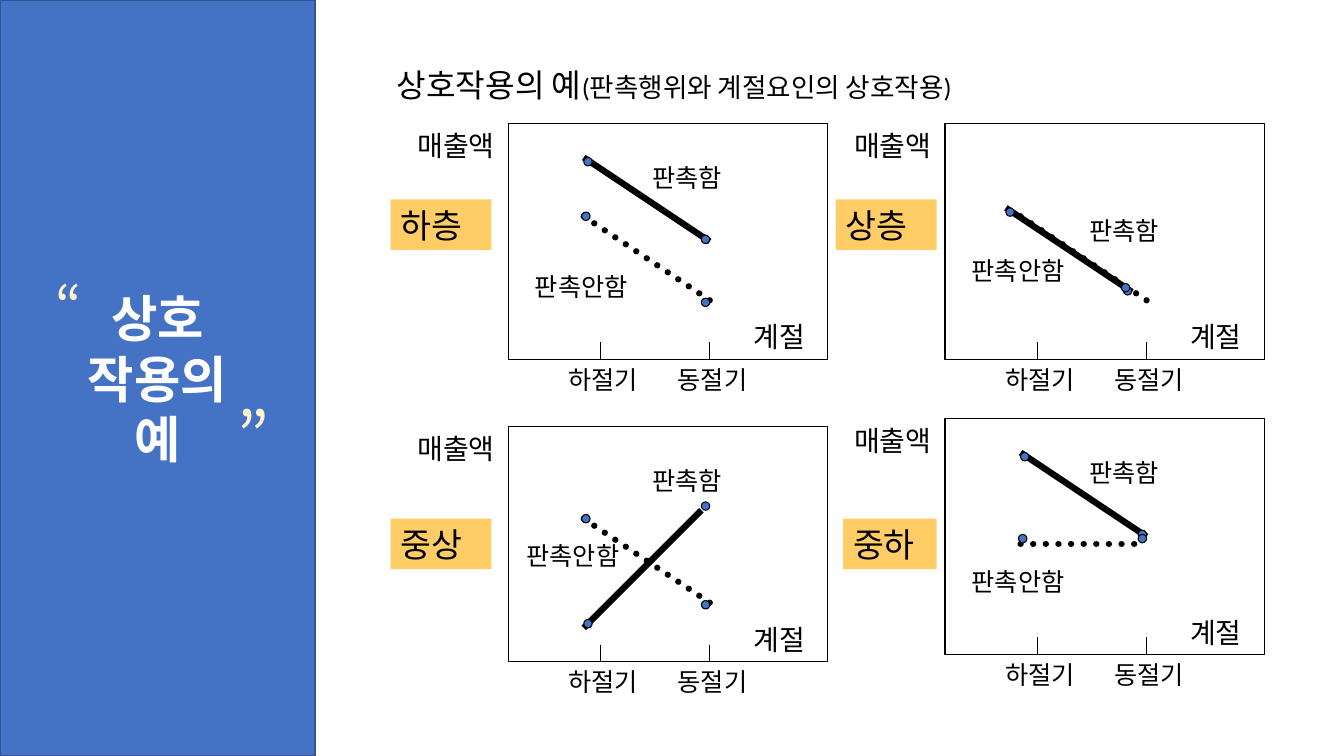
"""Build the slide on interaction of sales promotion and season."""
from typing import NamedTuple

from lxml.etree import SubElement
from pptx import Presentation
from pptx.dml.color import RGBColor
from pptx.enum.dml import MSO_LINE as Dash
from pptx.enum.shapes import MSO_CONNECTOR as Conn, MSO_SHAPE as Kind
from pptx.enum.text import MSO_ANCHOR as Anchor, MSO_AUTO_SIZE as Fit, PP_ALIGN as Align
from pptx.oxml.ns import qn
from pptx.util import Emu, Pt

PX = 9525
BLACK, WHITE, BLUE = "000000", "FFFFFF", "4472C4"
NAVY, AMBER, CREAM = "325491", "FFCC66", "FFF2CC"
SERIF, SANS, CJK = "Times New Roman", "Calibri", "Noto Sans CJK KR"


class Point(NamedTuple):
    x: int
    y: int


class Box(NamedTuple):
    x: int
    y: int
    w: int
    h: int


class Panel(NamedTuple):
    """A plot at a place, with parts measured from its corner."""
    at: Point
    solid: tuple[Point, Point]
    dotted: tuple[Point, Point]
    marks: list[Point]
    yes: Point
    no: Point


class Tag(NamedTuple):
    text: str
    box: Box


class Quote(NamedTuple):
    text: str
    box: Box
    size: int


FALL = (Point(72, 32), Point(192, 112))
DOWN = (Point(72, 88), Point(192, 168))
PANELS = [
    Panel(Point(484, 118), FALL, DOWN,
          [Point(72, 32), Point(184, 106), Point(70, 84), Point(184, 166)],
          Point(128, 32), Point(16, 136)),
    Panel(Point(900, 118), (Point(58, 80), Point(178, 160)), DOWN,
          [Point(58, 80), Point(170, 155), Point(168, 152)],
          Point(128, 82), Point(16, 120)),
    Panel(Point(484, 406), (Point(72, 192), Point(184, 80)), DOWN,
          [Point(72, 184), Point(184, 72), Point(70, 84), Point(184, 166)],
          Point(128, 32), Point(8, 104)),
    Panel(Point(900, 399), FALL, (Point(72, 119), Point(192, 119)),
          [Point(72, 32), Point(184, 106), Point(70, 110), Point(184, 110)],
          Point(128, 32), Point(16, 136)),
]
TAGS = [
    Tag("하층", Box(372, 190, 96, 48)),
    Tag("중하", Box(803, 494, 89, 48)),
    Tag("상층", Box(796, 190, 96, 48)),
    Tag("중상", Box(372, 494, 96, 48)),
]
QUOTES = [
    Quote("“", Box(43, 254, 47, 74), 40),
    Quote("”", Box(217, 371, 53, 87), 48),
]


def tint(code: str) -> RGBColor:
    """Turn a hex string into a colour."""
    return RGBColor.from_string(code)


def scale(box: Box) -> list[Emu]:
    """Turn px into EMU."""
    return [Emu(n * PX) for n in box]


def write(shape, *lines, size=18, font=SERIF, color=BLACK, bold=False,
          align=Align.LEFT, anchor=Anchor.TOP, wrap=True, space=None) -> None:
    """Fill a shape with paragraphs; a line is a string or (text, size) runs."""
    frame = shape.text_frame
    frame.word_wrap = wrap
    frame.auto_size = Fit.NONE
    frame.vertical_anchor = anchor
    for i, line in enumerate(lines):
        para = frame.add_paragraph() if i else frame.paragraphs[0]
        para.alignment = align
        if space:
            para.line_spacing = space
        for text, points in [(line, size)] if isinstance(line, str) else line:
            run = para.add_run()
            run.text = text
            run.font.size = Pt(points)
            run.font.name = font
            run.font.bold = bold
            run.font.color.rgb = tint(color)


def label(slide, text: str, box: Box, **form) -> None:
    """Add a text box."""
    write(slide.shapes.add_textbox(*scale(box)), text, **form)


def block(slide, kind: Kind, box: Box, fill: str = "", line: str = "", width: float = 0.75):
    """Add a preset shape with optional fill and line."""
    shape = slide.shapes.add_shape(kind, *scale(box))
    shape.shadow.inherit = False
    if fill:
        shape.fill.solid()
        shape.fill.fore_color.rgb = tint(fill)
    else:
        shape.fill.background()
    if line:
        shape.line.color.rgb = tint(line)
        shape.line.width = Pt(width)
    else:
        shape.line.fill.background()
    return shape


def rule(slide, at: Point, ends: tuple[Point, Point], width: float, dots: bool = False) -> None:
    """Add a straight line between two points of a plot."""
    spots = [Emu((n + off) * PX) for end in ends for n, off in zip(end, at)]
    link = slide.shapes.add_connector(Conn.STRAIGHT, *spots)
    link.line.color.rgb = tint(BLACK)
    link.line.width = Pt(width)
    if dots:
        link.line.dash_style = Dash.ROUND_DOT
        link.line._get_or_add_ln().set("cap", "rnd")
    SubElement(link._element.spPr, qn("a:effectLst"))


def plot(slide, panel: Panel) -> None:
    """Draw one plot with its axis words, lines and marks."""
    at = panel.at

    def word(text: str, x: int, y: int, w: int, size: int = 18) -> None:
        """Place a word from the corner of the plot."""
        label(slide, text, Box(at.x + x, at.y + y, w, 2 * size + 2), size=size)

    block(slide, Kind.RECTANGLE, Box(*at, 304, 224), line=BLACK)
    for x, season in ((88, "하절기"), (192, "동절기")):
        rule(slide, at, (Point(x, 208), Point(x, 224)), 0.75)
        word(season, x - 40, 224, 96)
    word("계절", 224, 182, 88, 20)
    word("매출액", -96, 0, 128, 20)
    rule(slide, at, panel.solid, 4.5)
    rule(slide, at, panel.dotted, 4.5, dots=True)
    for mark in panel.marks:
        block(slide, Kind.OVAL, Box(at.x + mark.x, at.y + mark.y, 8, 8), BLUE, BLACK)
    word("판촉함", *panel.yes, 128)
    word("판촉안함", *panel.no, 144)


def main() -> None:
    """Build and save the slide."""
    deck = Presentation()
    deck.slide_width, deck.slide_height = Emu(1280 * PX), Emu(720 * PX)
    slide = deck.slides.add_slide(deck.slide_layouts[5])
    title = slide.shapes.title
    title.left, title.top, title.width, title.height = scale(Box(368, 36, 907, 94))
    write(title, [("상호작용의 예", 23), ("(판촉행위와 계절요인의 상호작용)", 19)],
          font=SANS, anchor=Anchor.MIDDLE, space=0.9)
    for panel in PANELS:
        plot(slide, panel)
    for tag in TAGS:
        write(block(slide, Kind.RECTANGLE, tag.box, AMBER), tag.text, size=24)
    side = block(slide, Kind.RECTANGLE, Box(0, 0, 300, 720), BLUE, NAVY, 1)
    write(side, "상호", "작용의", "예", size=36, font=SANS, color=WHITE, bold=True,
          align=Align.CENTER, anchor=Anchor.MIDDLE)
    for quote in QUOTES:
        label(slide, quote.text, quote.box, size=quote.size, font=CJK, color=CREAM, wrap=False)
    deck.save("out.pptx")


if __name__ == "__main__":
    main()
